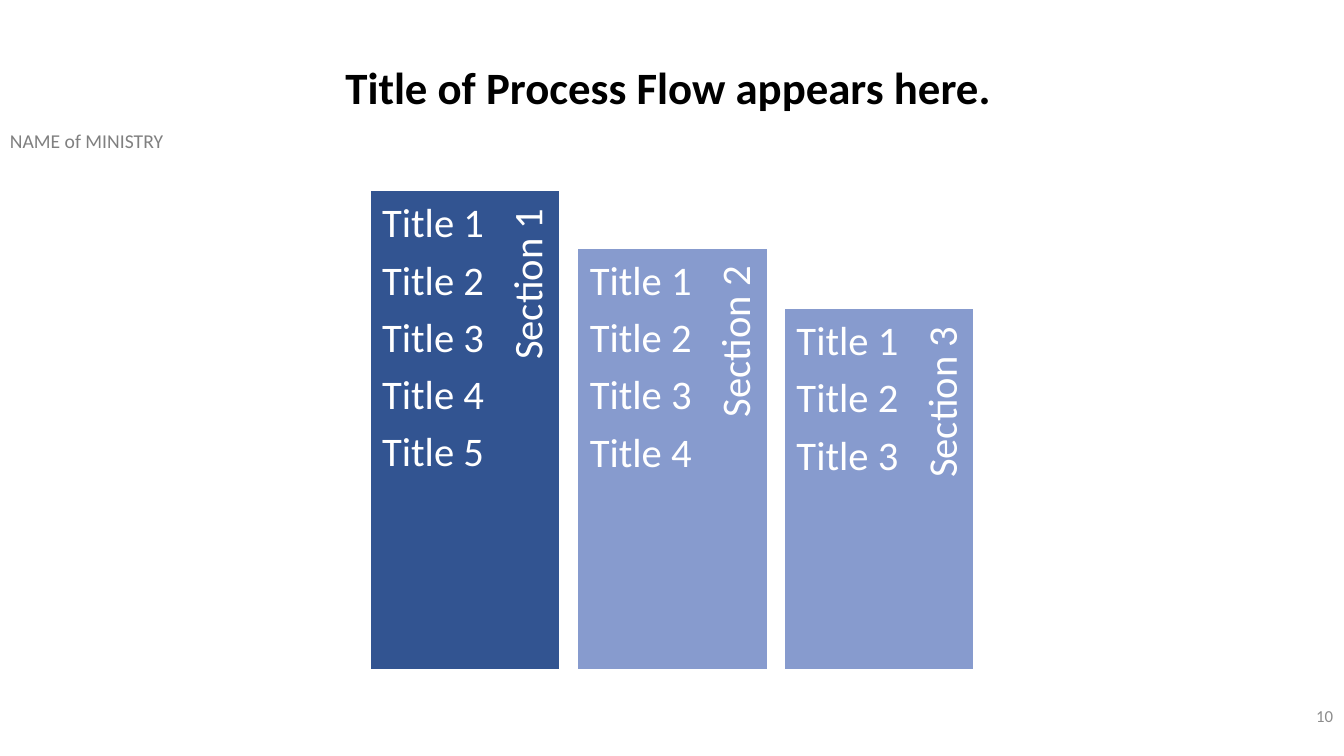
from pptx import Presentation
from pptx import util as u
from pptx.dml.color import RGBColor
from pptx.enum import shapes, text

WHITE = RGBColor(0xFF, 0xFF, 0xFF)
BLACK = RGBColor(0, 0, 0)
GRAY = RGBColor(0x80, 0x80, 0x80)
LIGHT_GRAY = RGBColor(0x8C, 0x8C, 0x8C)
DARK_BLUE = RGBColor(0x32, 0x54, 0x91)
LIGHT_BLUE = RGBColor(0x87, 0x9B, 0xCE)

LEFT, CENTER, RIGHT = text.PP_ALIGN.LEFT, text.PP_ALIGN.CENTER, text.PP_ALIGN.RIGHT
TOP, MIDDLE = text.MSO_ANCHOR.TOP, text.MSO_ANCHOR.MIDDLE

BAR_WIDTH, BAR_BOTTOM = 1.88, 6.64
LABEL_OFFSET, LABEL_HEIGHT = 1.6, 0.49

deck = Presentation()
deck.slide_width = u.Inches(13.33)
deck.slide_height = u.Inches(7.5)
page = deck.slides.add_slide(deck.slide_layouts[6])


def add_text(place, lines, size, color, align=LEFT, anchor=TOP, bold=False,
             insets=(0.1, 0.05, 0.1, 0.05), spacing=1.0, after=0):
    """Add a text box; place and insets are in inches, after is in points."""
    box = page.shapes.add_textbox(*map(u.Inches, place))
    frame = box.text_frame
    frame.word_wrap = True
    frame.vertical_anchor = anchor
    for side, inset in zip(("left", "top", "right", "bottom"), insets):
        setattr(frame, f"margin_{side}", u.Inches(inset))
    frame.text = "\n".join(lines)
    for para in frame.paragraphs:
        para.alignment = align
        para.line_spacing = spacing
        para.space_after = u.Pt(after)
        for span in para.runs:
            for name, value in {"name": "Calibri", "size": u.Pt(size), "bold": bold}.items():
                setattr(span.font, name, value)
            span.font.color.rgb = color
    return box


add_text((0, 1.23, 2.9, 0.34), ["NAME of MINISTRY"], 14, GRAY)
add_text((10.32, 6.9, 3, 0.4), ["10"], 12, LIGHT_GRAY, RIGHT, MIDDLE)

sections = [
    ("Section 1", 3.67, 1.89, 5, DARK_BLUE),
    ("Section 2", 5.73, 2.46, 4, LIGHT_BLUE),
    ("Section 3", 7.78, 3.06, 3, LIGHT_BLUE),
]
for name, left, top, title_count, color in sections:
    height = BAR_BOTTOM - top
    bar = page.shapes.add_shape(
        shapes.MSO_SHAPE.RECTANGLE, *map(u.Inches, (left, top, BAR_WIDTH, height)))
    bar.shadow.inherit = False
    bar.fill.solid()
    bar.fill.fore_color.rgb = color
    bar.line.color.rgb = WHITE
    bar.line.width = u.Pt(1)

    # The label is turned about its centre, so its right end meets the bar's top.
    length = 0.9 * height
    label_place = (left + LABEL_OFFSET - length / 2,
                   top + length / 2 - LABEL_HEIGHT / 2, length, LABEL_HEIGHT)
    label = add_text(label_place, [name], 29, WHITE, RIGHT, MIDDLE,
                     insets=(0.12, 0, 0.18, 0.04), spacing=0.9)
    label.rotation = 270

    titles = [f"Title {number}" for number in range(1, title_count + 1)]
    add_text((left, top, 1.34, height), titles, 29, WHITE,
             insets=(0.12, 0.12, 0.12, 0.12), spacing=0.9, after=9.6)

add_text((3.28, 0.6, 6.8, 1.07), ["Title of Process Flow appears here. "], 32, BLACK,
         CENTER, bold=True, spacing=0.9)

deck.save("out.pptx")
